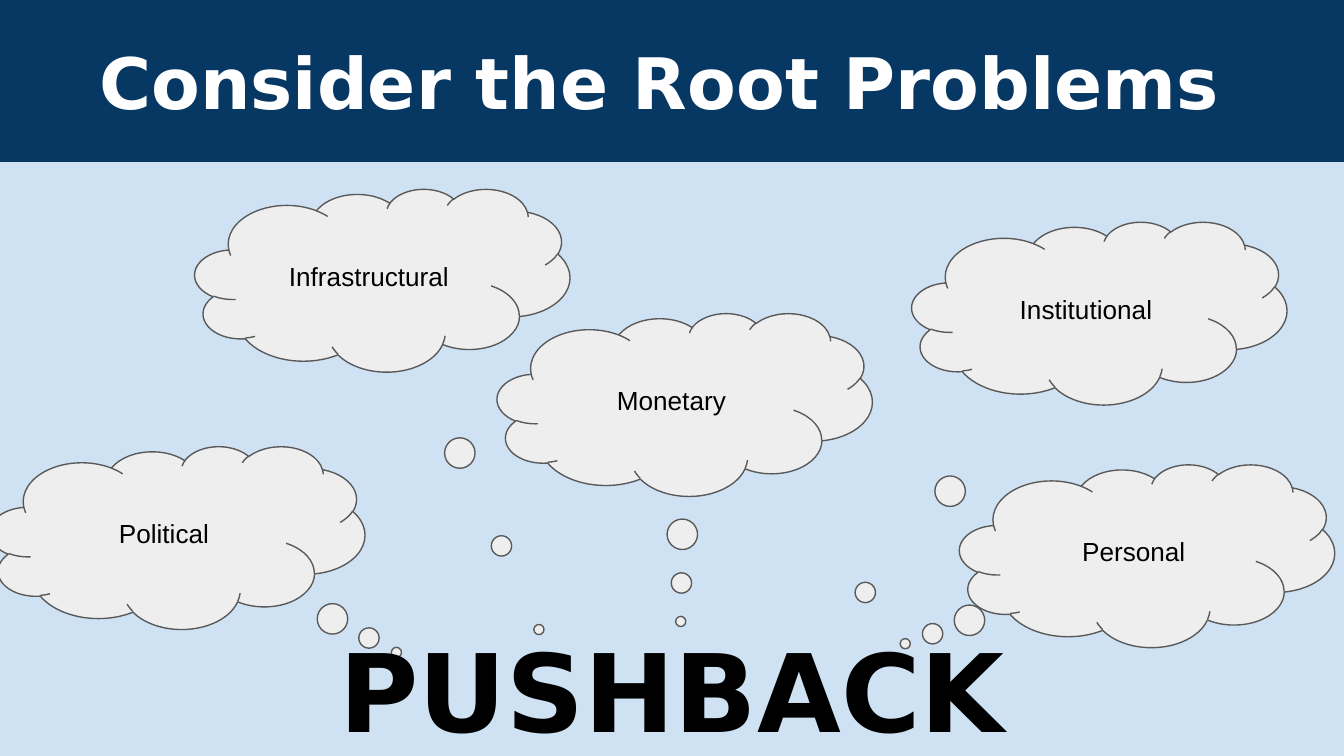
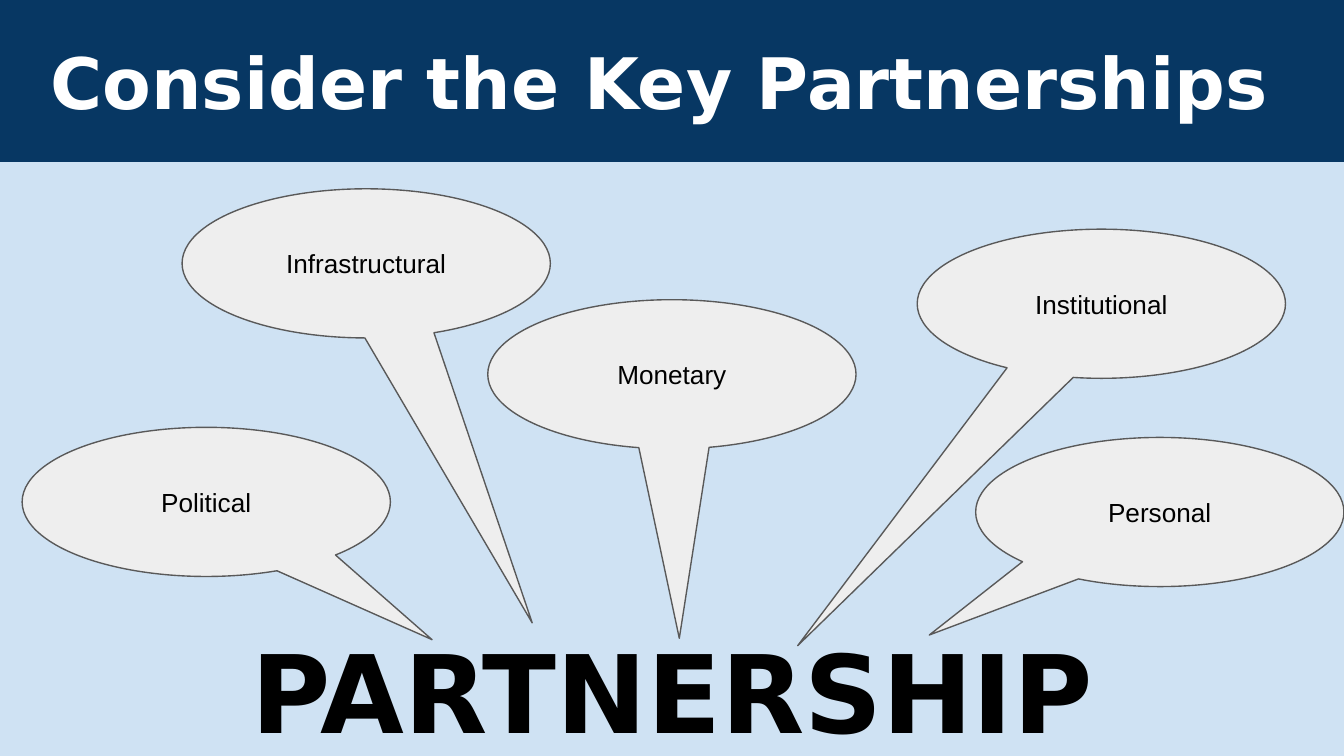
from pptx import Presentation
from pptx.dml.color import RGBColor
from pptx.enum.shapes import MSO_SHAPE
from pptx.enum.text import MSO_ANCHOR, PP_ALIGN
from pptx.util import Emu, Pt

RECTANGLE = MSO_SHAPE.RECTANGLE
CLOUD = MSO_SHAPE.CLOUD_CALLOUT
SPEECH = MSO_SHAPE.OVAL_CALLOUT
MIDDLE, BOTTOM = MSO_ANCHOR.MIDDLE, MSO_ANCHOR.BOTTOM
CENTER = PP_ALIGN.CENTER

EMU_PER_PX = 4572  # 200 px to the inch
SLIDE_WIDTH, SLIDE_HEIGHT = 2000, 1125
BAND_HEIGHT = 241
INSET = 20
WORD_LEFT, WORD_WIDTH = 68, 1864
CLOUD_SIZE = (558, 272)
SPEECH_SIZE = (548, 222)
HEADING_FONT, BODY_FONT = "DejaVu Sans", "Arial"
BLANK_LAYOUT = 6

COLORS = {
    "background": "CFE2F3",
    "band": "073763",
    "bubble": "EEEEEE",
    "outline": "595959",
    "title": "FFFFFF",
    "text": "000000",
}

# Label, left and top of the bubble, then the point its tail reaches.
PROBLEMS = [
    ("Institutional", (1357, 330), (1171, 1021)),
    ("Infrastructural", (290, 281), (802, 937)),
    ("Political", (-15, 664), (590, 971)),
    ("Monetary", (740, 466), (1013, 925)),
    ("Personal", (1428, 691), (1347, 958)),
]
PARTNERSHIPS = [
    ("Political", (33, 636), (643, 952)),
    ("Infrastructural", (271, 281), (792, 927)),
    ("Monetary", (726, 446), (1011, 950)),
    ("Institutional", (1365, 341), (1187, 961)),
    ("Personal", (1452, 651), (1383, 945)),
]


def px(value):
    return Emu(value * EMU_PER_PX)


def color(name):
    return RGBColor.from_string(COLORS[name])


def write(shape, text, size=14, font=BODY_FONT, ink="text", bold=False,
          anchor=MIDDLE):
    frame = shape.text_frame
    frame.word_wrap = True
    frame.vertical_anchor = anchor
    frame.margin_left = frame.margin_right = px(INSET)
    frame.margin_top = frame.margin_bottom = px(INSET)
    paragraph = frame.paragraphs[0]
    paragraph.alignment = CENTER
    run = paragraph.add_run()
    run.text = text
    run.font.size = Pt(size)
    run.font.name = font
    run.font.bold = bold
    run.font.color.rgb = color(ink)


class Deck:
    """Holds the presentation, its style and the current slide."""

    def __init__(self):
        self.presentation = Presentation()
        self.presentation.slide_width = px(SLIDE_WIDTH)
        self.presentation.slide_height = px(SLIDE_HEIGHT)
        self.slide = None

    def start_slide(self, title):
        layout = self.presentation.slide_layouts[BLANK_LAYOUT]
        self.slide = self.presentation.slides.add_slide(layout)
        fill = self.slide.background.fill
        fill.solid()
        fill.fore_color.rgb = color("background")
        band = self.shape(RECTANGLE, 0, 0, SLIDE_WIDTH, BAND_HEIGHT, "band")
        write(band, title, size=38, font=HEADING_FONT, ink="title", bold=True)

    def shape(self, kind, left, top, width, height, fill, outline=None):
        shape = self.slide.shapes.add_shape(
            kind, px(left), px(top), px(width), px(height))
        shape.shadow.inherit = False
        shape.fill.solid()
        shape.fill.fore_color.rgb = color(fill)
        if outline:
            shape.line.color.rgb = color(outline)
            shape.line.width = Pt(0.75)
        else:
            shape.line.fill.background()
        return shape

    def bubbles(self, kind, size, items):
        """Draw callouts; a tail is set as a share of the size from the centre."""
        for label, corner, tip in items:
            bubble = self.shape(kind, *corner, *size, "bubble", "outline")
            for axis in (0, 1):
                offset = tip[axis] - corner[axis] - size[axis] / 2
                bubble.adjustments[axis] = offset / size[axis]
            write(bubble, label)

    def key_word(self, text, top, height):
        box = self.slide.shapes.add_textbox(
            px(WORD_LEFT), px(top), px(WORD_WIDTH), px(height))
        write(box, text, size=58, font=HEADING_FONT, bold=True, anchor=BOTTOM)


def main():
    deck = Deck()

    deck.start_slide("Consider the Root Problems ")
    deck.bubbles(CLOUD, CLOUD_SIZE, PROBLEMS)
    deck.key_word("PUSHBACK", 270, 873)

    deck.start_slide("Consider the Key Partnerships ")
    deck.key_word("PARTNERSHIP", 872, 272)
    deck.bubbles(SPEECH, SPEECH_SIZE, PARTNERSHIPS)

    deck.presentation.save("out.pptx")


if __name__ == "__main__":
    main()
